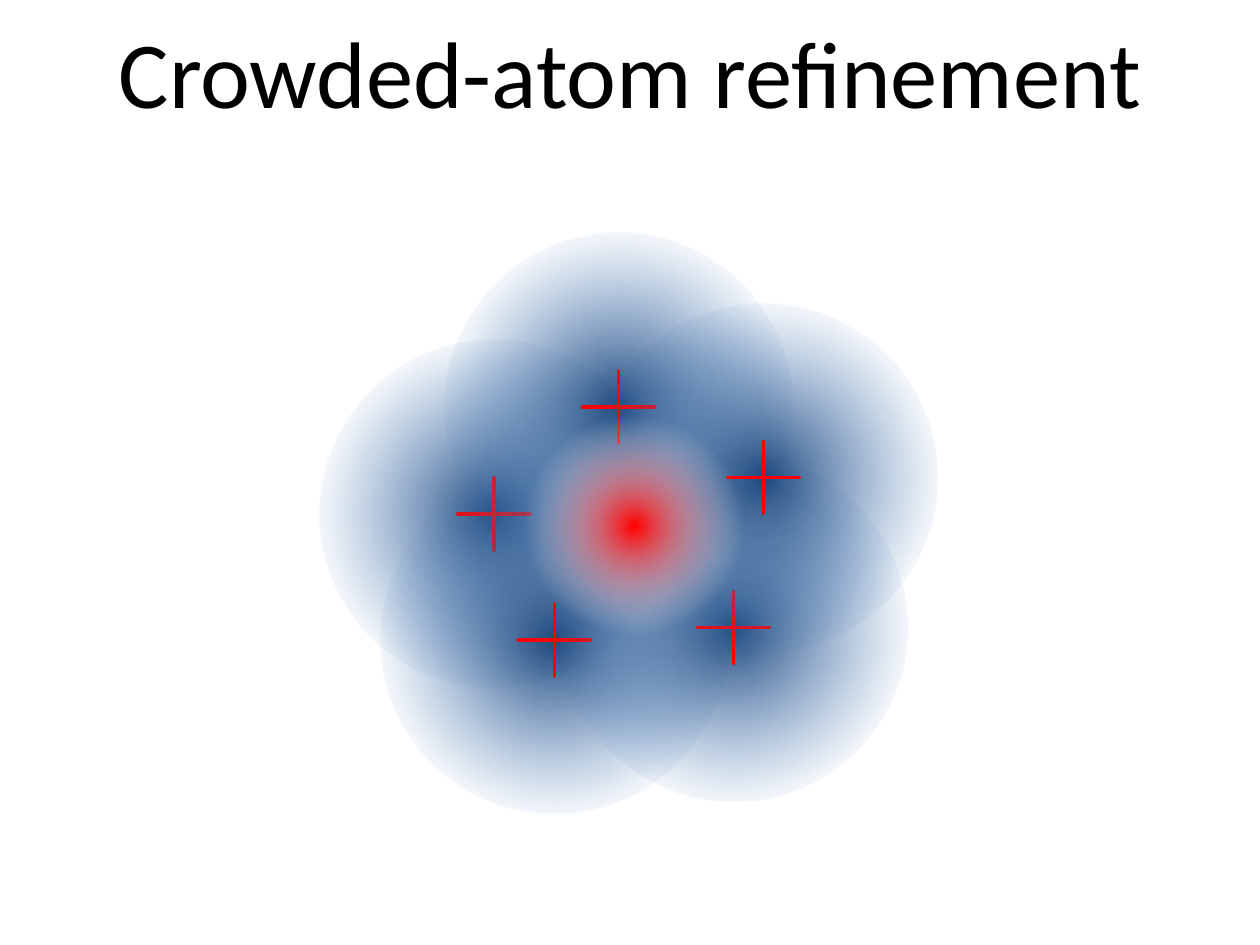
from lxml import etree
from pptx import Presentation
from pptx.dml.color import RGBColor
from pptx.enum.shapes import MSO_SHAPE
from pptx.enum.text import MSO_ANCHOR, PP_ALIGN
from pptx.oxml import parse_xml
from pptx.oxml.ns import nsdecls, qn
from pptx.util import Inches, Pt

OVAL, PLUS = MSO_SHAPE.OVAL, MSO_SHAPE.MATH_PLUS
MIDDLE, CENTER = MSO_ANCHOR.MIDDLE, PP_ALIGN.CENTER

COLORS = {
    "text": "000000",
    "atom_core": "1F497D",
    "atom_edge": "4F81BD",
    "marker": "FF0000",
    "glow_edge": "FFFFFF",
}
TITLE_BOX = (0.75, -0.03, 8.5, 1.19)
CLUSTER_BOX = (2.54, 1.85, 4.9, 4.61)
ATOM_SIZE, MARKER_SIZE, GLOW_SIZE = 2.76, 0.78, 2.51
# Centres, in inches from the top left corner of the cluster
ATOM_CENTERS = [(1.38, 2.23), (2.37, 1.38), (1.86, 3.23), (3.28, 3.13), (3.52, 1.94)]
GLOW_CENTER = (2.49, 2.32)


def rgb(name):
    return RGBColor.from_string(COLORS[name])


def write_text(frame, text, size, color, font="Calibri", align=CENTER, anchor=MIDDLE):
    frame.word_wrap = True
    frame.vertical_anchor = anchor
    paragraph = frame.paragraphs[0]
    paragraph.alignment = align
    run = paragraph.add_run()
    run.text = text
    run.font.name = font
    run.font.size = Pt(size)
    run.font.color.rgb = rgb(color)


def add_centered(shapes, preset, center, size):
    """Add a square-framed preset shape around a centre point."""
    x, y = center
    shape = shapes.add_shape(preset, Inches(x - size / 2), Inches(y - size / 2),
                             Inches(size), Inches(size))
    shape.shadow.inherit = False
    return shape


def add_fading_disc(shapes, center, size, core, edge, fade_end):
    """Add a disc that fades from its core colour to a clear edge at fade_end percent."""
    disc = add_centered(shapes, OVAL, center, size)
    disc.line.fill.background()
    disc.fill.background()
    properties = disc.element.spPr
    gradient = parse_xml(
        f'<a:gradFill {nsdecls("a")} rotWithShape="1"><a:gsLst>'
        f'<a:gs pos="0"><a:srgbClr val="{COLORS[core]}"/></a:gs>'
        f'<a:gs pos="{fade_end * 1000}"><a:srgbClr val="{COLORS[edge]}">'
        '<a:alpha val="0"/></a:srgbClr></a:gs></a:gsLst>'
        '<a:path path="circle"><a:fillToRect l="50000" t="50000" r="50000" b="50000"/>'
        '</a:path></a:gradFill>')
    properties.replace(properties.find(qn("a:noFill")), gradient)


def add_atom(shapes, center):
    atom = shapes.add_group_shape().shapes
    add_fading_disc(atom, center, ATOM_SIZE, "atom_core", "atom_edge", 75)
    marker = add_centered(atom, PLUS, center, MARKER_SIZE)
    marker.adjustments[0] = 0
    marker.fill.solid()
    marker.fill.fore_color.rgb = rgb("atom_edge")
    marker.line.color.rgb = rgb("marker")
    marker.line.width = Pt(2)


def add_cluster(shapes, box):
    left, top = box[:2]
    for x, y in ATOM_CENTERS:
        add_atom(shapes, (left + x, top + y))
    glow_x, glow_y = GLOW_CENTER
    add_fading_disc(shapes, (left + glow_x, top + glow_y), GLOW_SIZE,
                    "marker", "glow_edge", 49)


def place_title(title, box):
    title.left, title.top, title.width, title.height = map(Inches, box)
    write_text(title.text_frame, "Crowded-atom refinement", size=54, color="text")


def main():
    deck = Presentation()
    deck.slide_width, deck.slide_height = Inches(10), Inches(7.5)
    slide = deck.slides.add_slide(deck.slide_layouts.get_by_name("Title Only"))
    place_title(slide.shapes.title, TITLE_BOX)
    add_cluster(slide.shapes, CLUSTER_BOX)
    deck.save("out.pptx")


if __name__ == "__main__":
    main()
